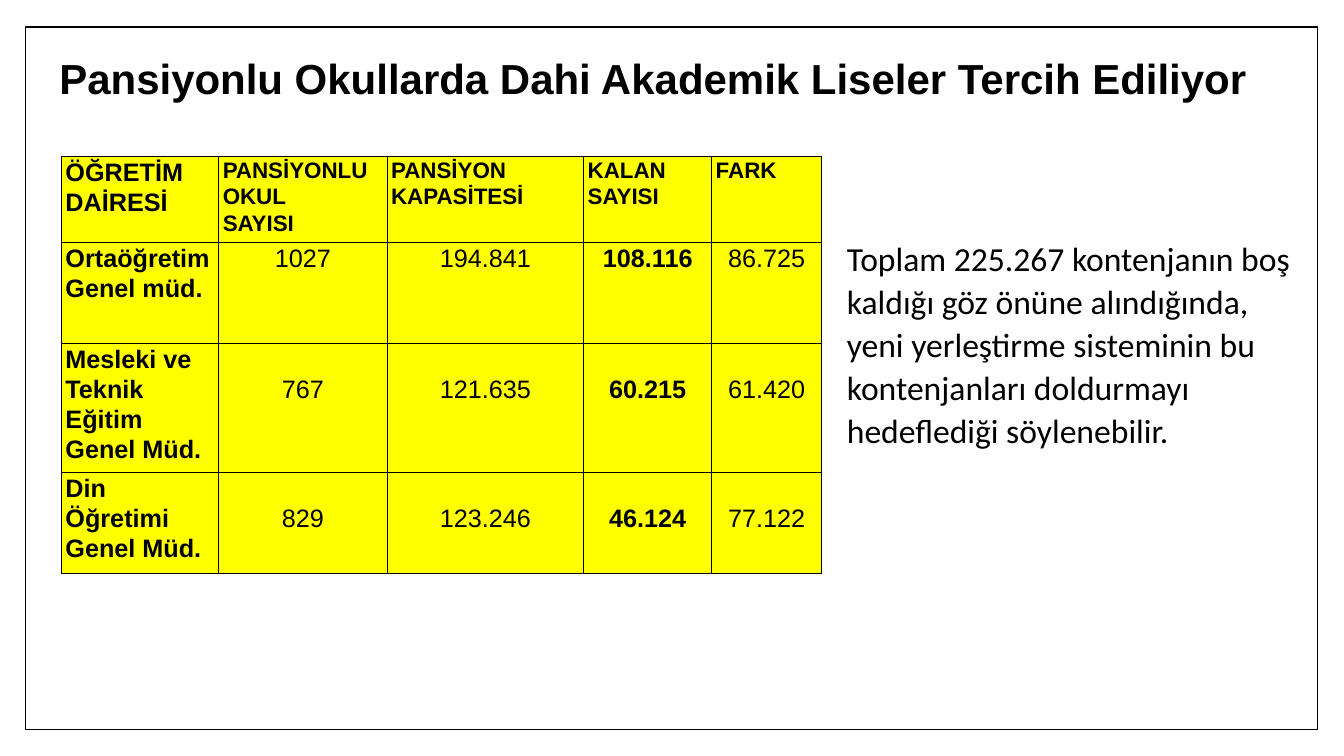
import pptx
import pptx.dml.color
import pptx.enum.shapes
import pptx.enum.text
import pptx.oxml
import pptx.oxml.ns
import pptx.util
from dataclasses import dataclass

RGB = pptx.dml.color.RGBColor
ALIGN = pptx.enum.text.PP_ALIGN
ANCHOR = pptx.enum.text.MSO_ANCHOR
BLACK = RGB(0, 0, 0)
WHITE = RGB(255, 255, 255)
YELLOW = RGB(255, 255, 0)
LINE = 30  # height of one table text line, px


def px(count: int) -> pptx.util.Emu:
    """Turn px, 100 to the inch, into EMU."""
    return pptx.util.Emu(count * 9144)


@dataclass
class Box:
    left: int
    top: int
    width: int
    height: int

    def emu(self) -> list[pptx.util.Emu]:
        return [px(n) for n in (self.left, self.top, self.width, self.height)]


@dataclass
class Style:
    size: int
    bold: bool = False
    font: str = "Arial"
    align: ALIGN = ALIGN.LEFT
    space: float = 1.07


@dataclass
class Label:
    box: Box
    text: str
    style: Style
    anchor: ANCHOR
    left: int
    top: int


@dataclass
class Row:
    height: int
    name: str
    values: list[str]
    drop: int = 0


LABELS = [
    Label(Box(49, 47, 1252, 66),
          "Pansiyonlu Okullarda Dahi Akademik Liseler Tercih Ediliyor",
          Style(30, True, space=0.9), ANCHOR.MIDDLE, 10, 5),
    Label(Box(825, 155, 476, 515),
          "Toplam 225.267 kontenjanın boş kaldığı göz önüne alındığında, "
          "yeni yerleştirme sisteminin bu kontenjanları doldurmayı "
          "hedeflediği söylenebilir.",
          Style(24, font="Calibri"), ANCHOR.TOP, 15, 78),
]

WIDTHS = [156, 167, 195, 127, 109]
BOLD_COL = 3
ROWS = [
    Row(79, "ÖĞRETİM DAİRESİ",
        ["PANSİYONLU OKUL\nSAYISI", "PANSİYON\nKAPASİTESİ", "KALAN SAYISI", "FARK"]),
    Row(100, "Ortaöğretim\nGenel müd.", ["1027", "194.841", "108.116", "86.725"]),
    Row(121, "Mesleki ve Teknik Eğitim Genel Müd.",
        ["767", "121.635", "60.215", "61.420"], LINE),
    Row(100, "Din Öğretimi\nGenel Müd.", ["829", "123.246", "46.124", "77.122"], LINE),
]


def write(frame, text: str, style: Style) -> None:
    frame.text = text
    for para in frame.paragraphs:
        para.alignment = style.align
        para.line_spacing = style.space
        para.font.name = style.font
        para.font.size = pptx.util.Pt(style.size)
        para.font.bold = style.bold
        para.font.color.rgb = BLACK


def add_frame(slide) -> None:
    frame = slide.shapes.add_shape(
        pptx.enum.shapes.MSO_SHAPE.RECTANGLE, *Box(25, 27, 1282, 697).emu())
    frame.shadow.inherit = False
    frame.fill.solid()
    frame.fill.fore_color.rgb = WHITE
    frame.line.color.rgb = BLACK
    frame.line.width = pptx.util.Pt(1)


def add_label(slide, label: Label) -> None:
    frame = slide.shapes.add_textbox(*label.box.emu()).text_frame
    frame.word_wrap = True
    frame.vertical_anchor = label.anchor
    frame.margin_left = px(label.left)
    frame.margin_top = px(label.top)
    write(frame, label.text, label.style)


def add_edges(cell) -> None:
    """Draw a thin black border on all four sides; call before the fill."""
    props = cell._tc.get_or_add_tcPr()
    for side in "LRTB":
        props.append(pptx.oxml.parse_xml(
            f'<a:ln{side} {pptx.oxml.ns.nsdecls("a")} w="12700"><a:solidFill>'
            f'<a:srgbClr val="{BLACK}"/></a:solidFill></a:ln{side}>'))


def fill_cell(cell, text: str, style: Style, drop: int) -> None:
    cell.margin_left = cell.margin_right = px(4)
    cell.margin_top = px(drop)
    cell.margin_bottom = 0
    add_edges(cell)
    cell.fill.solid()
    cell.fill.fore_color.rgb = YELLOW
    write(cell.text_frame, text, style)


def pick_style(row: int, col: int) -> Style:
    if col == 0:
        return Style(18, True)
    if row == 0:
        return Style(16, True)
    return Style(18, col == BOLD_COL, align=ALIGN.CENTER)


def add_table(slide) -> None:
    box = Box(61, 155, sum(WIDTHS), sum(row.height for row in ROWS))
    table = slide.shapes.add_table(len(ROWS), len(WIDTHS), *box.emu()).table
    table.first_row = table.horz_banding = False
    for col, width in enumerate(WIDTHS):
        table.columns[col].width = px(width)
    for r, row in enumerate(ROWS):
        table.rows[r].height = px(row.height)
        for c, text in enumerate([row.name, *row.values]):
            fill_cell(table.cell(r, c), text, pick_style(r, c), row.drop if c else 0)


def main() -> None:
    deck = pptx.Presentation()
    deck.slide_width, deck.slide_height = px(1333), px(750)
    slide = deck.slides.add_slide(deck.slide_layouts[6])
    add_frame(slide)
    for label in LABELS:
        add_label(slide, label)
    add_table(slide)
    deck.save("out.pptx")


if __name__ == "__main__":
    main()
